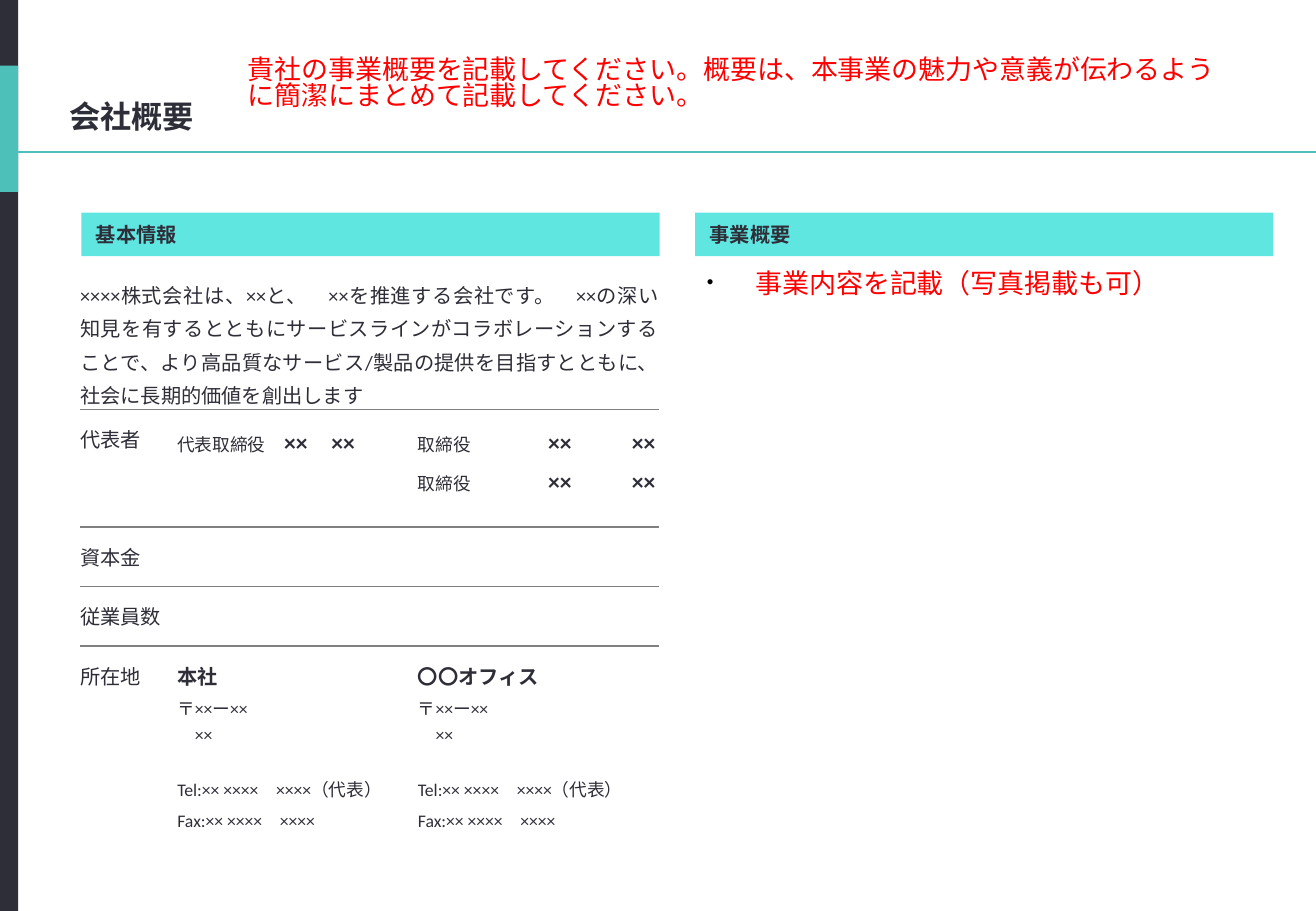
from lxml.etree import SubElement
from pptx import Presentation
from pptx.dml.color import RGBColor
from pptx.enum.shapes import MSO_CONNECTOR, MSO_SHAPE
from pptx.enum.text import MSO_ANCHOR, PP_ALIGN
from pptx.oxml.ns import qn
from pptx.util import Pt

PX = 9144
INK, TEAL, AQUA, RED, GRAY = "2E2E38", "4EC0BA", "60E6E1", "FF0000", "808080"
CJK = "Noto Sans CJK JP"
GUIDE = {"size": 16, "color": RED, "font": CJK}

INTRO = ("××××株式会社は、××と、　××を推進する会社です。　××の深い知見を有するとともに"
         "サービスラインがコラボレーションすることで、より高品質なサービス/製品の提供を"
         "目指すとともに、社会に長期的価値を創出します")
LABELS = ["代表者", "資本金", "従業員数", "所在地"]
OFFICES = ["本社", "〇〇オフィス"]
ADDRESS = [("〒××ー××\v　××", 0), ("Tel:×× ××××　××××（代表）", 15), ("Fax:×× ××××　××××", 0)]


def px(*lengths):
    return [length * PX for length in lengths]


def rgb(value):
    return RGBColor.from_string(value)


def add_span(para, text, size=12, bold=False, color=INK, font="Calibri"):
    for index, line in enumerate(text.split("\v")):
        if index:
            para.add_line_break()
        span = para.add_run()
        span.text = line
        span.font.size = Pt(size)
        span.font.bold = bold
        span.font.color.rgb = rgb(color)
        span.font.name = font
        SubElement(span.font._element, qn("a:ea"), typeface=CJK)


def set_margins(box, left, top, right, bottom):
    box.margin_left, box.margin_top, box.margin_right, box.margin_bottom = px(left, top, right, bottom)


def add_bar(page, left, top, width, height, color):
    bar = page.shapes.add_shape(MSO_SHAPE.RECTANGLE, *px(left, top, width, height))
    bar.shadow.inherit = False
    bar.fill.solid()
    bar.fill.fore_color.rgb = rgb(color)
    bar.line.fill.background()
    return bar


def add_rule(page, left, top, right, color):
    rule = page.shapes.add_connector(MSO_CONNECTOR.STRAIGHT, *px(left, top, right, top))
    rule.line.color.rgb = rgb(color)
    rule.line.width = Pt(1.5)
    SubElement(rule._element.spPr, qn("a:effectLst"))


def add_heading(page, left, text):
    frame = add_bar(page, left, 175, 476, 36, AQUA).text_frame
    set_margins(frame, 12, 8, 12, 8)
    frame.vertical_anchor = MSO_ANCHOR.MIDDLE
    para = frame.paragraphs[0]
    para.alignment = PP_ALIGN.LEFT
    add_span(para, text, bold=True)


def add_text(page, left, top, width, height, text, **style):
    frame = page.shapes.add_textbox(*px(left, top, width, height)).text_frame
    frame.word_wrap = True
    para = frame.paragraphs[0]
    add_span(para, text, **style)
    return frame, para


def add_guide(page, left, top, width, height, text):
    para = add_text(page, left, top, width, height, text, **GUIDE)[1]
    para.space_before = Pt(3)
    para.line_spacing = 0.82
    return para


def add_bullet(para, indent):
    props = para._p.get_or_add_pPr()
    props.set("marL", str(indent * PX))
    props.set("indent", str(-indent * PX))
    SubElement(SubElement(props, qn("a:buClr")), qn("a:srgbClr"), val="000000")
    SubElement(props, qn("a:buSzPct"), val="70000")
    SubElement(props, qn("a:buFont"), typeface="Arial")
    SubElement(props, qn("a:buChar"), char="•")


def add_tabs(para, *stops):
    tabs = SubElement(para._p.get_or_add_pPr(), qn("a:tabLst"))
    for stop in stops:
        SubElement(tabs, qn("a:tab"), pos=str(stop * PX), algn="l")


def add_border(cell, side, visible):
    props = cell._tc.get_or_add_tcPr()
    line = SubElement(props, qn("a:" + side), w=str(Pt(1)))
    if visible:
        SubElement(SubElement(line, qn("a:solidFill")), qn("a:srgbClr"), val=GRAY)
    else:
        SubElement(line, qn("a:noFill"))


def add_grid(page, left, top, columns, rows):
    shape = page.shapes.add_table(len(rows), len(columns), *px(left, top, sum(columns), sum(rows)))
    table = shape.table
    table.first_row = table.horz_banding = False
    for column, width in zip(table.columns, columns):
        column.width = width * PX
    for index, (row, height) in enumerate(zip(table.rows, rows)):
        row.height = height * PX
        for cell in row.cells:
            set_margins(cell, 0, 12 if index else 8, 0, 0)
            add_border(cell, "lnL", False)
            add_border(cell, "lnR", False)
            add_border(cell, "lnT", index > 0)
            add_border(cell, "lnB", index < len(rows) - 1)
            cell.fill.background()
    return table


def add_cell_lines(cell, lines):
    frame = cell.text_frame
    paras = []
    for index, spans in enumerate(lines):
        para = frame.add_paragraph() if index else frame.paragraphs[0]
        para.space_after = Pt(3)
        for text, size, bold in spans:
            add_span(para, text, size, bold)
        paras.append(para)
    return paras


def add_profile(page):
    table = add_grid(page, 66, 219, [80, 198, 198], [118, 97, 49, 49, 229])
    table.cell(0, 0).merge(table.cell(0, 2))
    for row in (2, 3):
        table.cell(row, 1).merge(table.cell(row, 2))

    intro = add_cell_lines(table.cell(0, 0), [[(INTRO, 12, False)]])[0]
    intro.alignment = PP_ALIGN.JUSTIFY
    intro.line_spacing = 1.14
    intro.space_after = Pt(8)

    for row, label in enumerate(LABELS, 1):
        add_cell_lines(table.cell(row, 0), [[(label, 12, False)]])

    add_cell_lines(table.cell(1, 1), [[("代表取締役", 10.5, False), ("　", 11, False), ("××　××", 14, True)]])
    director = [("取締役", 10.5, False), ("\t××\t××", 14, True)]
    for para in add_cell_lines(table.cell(1, 2), [director, director]):
        add_tabs(para, 107, 176)

    for column, office in enumerate(OFFICES, 1):
        lines = [[(office, 12, True)]] + [[(text, 10.5, False)] for text, gap in ADDRESS]
        paras = add_cell_lines(table.cell(4, column), lines)
        for para, (text, gap) in zip(paras[1:], ADDRESS):
            para.space_before = Pt(gap)


def main():
    deck = Presentation()
    deck.slide_width, deck.slide_height = px(1083, 750)
    page = deck.slides.add_slide(deck.slide_layouts[6])

    add_bar(page, 0, 0, 15, 750, INK)
    add_bar(page, 0, 54, 15, 104, TEAL)
    add_rule(page, 0, 125, 1083, TEAL)

    title = add_text(page, 57, 80, 970, 37, "会社概要", size=18.5, bold=True)[0]
    set_margins(title, 0, 0, 0, 0)
    add_guide(page, 194, 43, 832, 58,
              "貴社の事業概要を記載してください。概要は、本事業の魅力や意義が伝わるように簡潔にまとめて記載してください。")

    add_profile(page)
    add_heading(page, 67, "基本情報")
    add_heading(page, 572, "事業概要")
    add_bullet(add_guide(page, 572, 219, 476, 495, "事業内容を記載（写真掲載も可）"), 40)

    deck.save("out.pptx")


if __name__ == "__main__":
    main()
